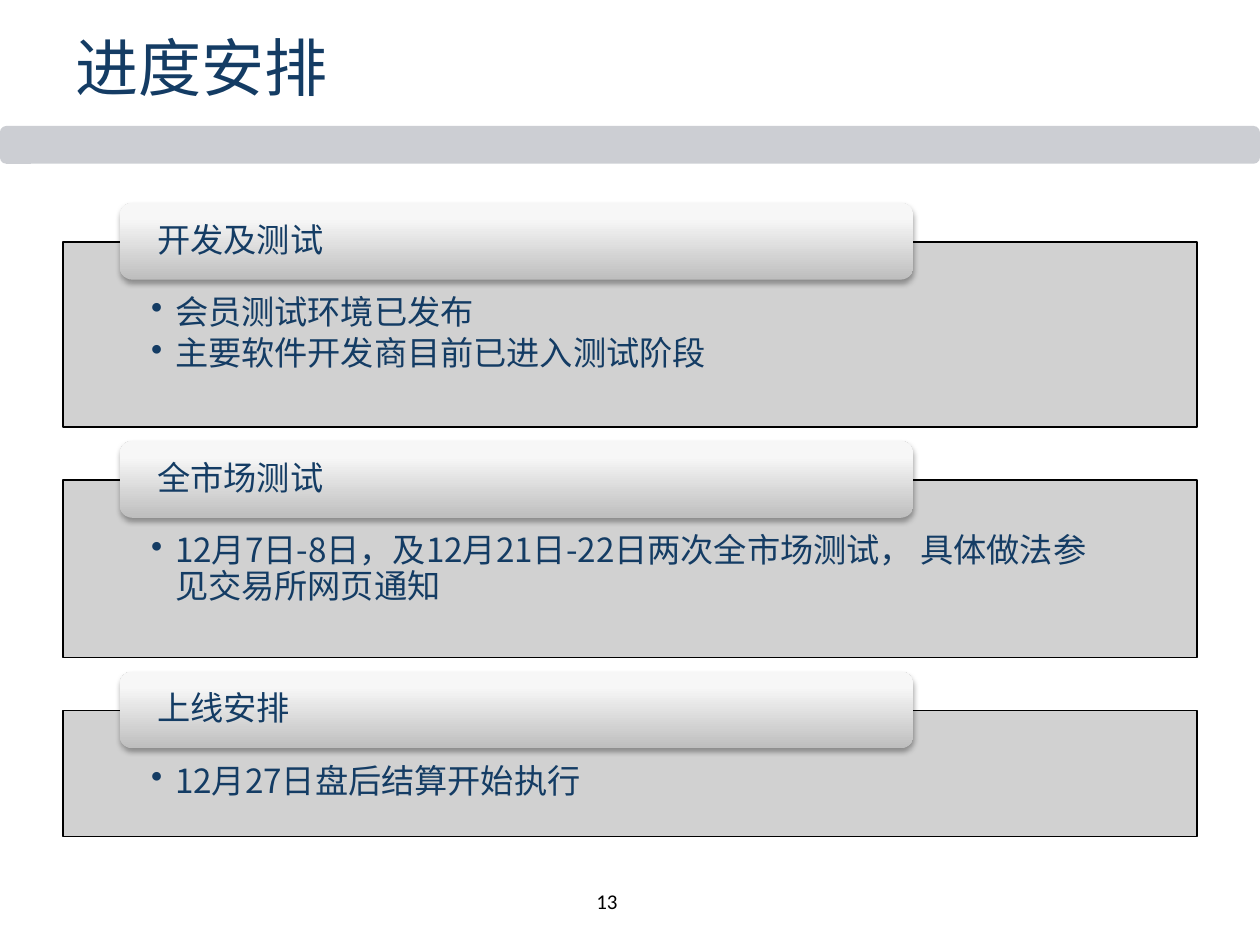
from copy import deepcopy

from lxml.etree import SubElement
from pptx import Presentation
from pptx.dml.color import RGBColor
from pptx.enum.shapes import MSO_SHAPE
from pptx.enum.text import MSO_ANCHOR, PP_ALIGN
from pptx.oxml.ns import qn
from pptx.util import Inches, Pt

COLORS = {
    "text": "143C64",
    "bar": "CCCED3",
    "panel": "CCCCCC",
    "black": "000000",
    "label_bottom": "BEBEBE",
    "label_middle": "F7F7F7",
    "label_top": "F8F8F8",
}
CHINESE_FONT = "Noto Sans CJK SC"
STAGES = [
    ("开发及测试", 1.47, ["会员测试环境已发布", "主要软件开发商目前已进入测试阶段"]),
    ("全市场测试", 1.41, ["12月7日-8日，及12月21日-22日两次全市场测试， 具体做法参见交易所网页通知"]),
    ("上线安排", 1, ["12月27日盘后结算开始执行"]),
]
STAGE_GAP = 0.42


def color(name):
    return RGBColor.from_string(COLORS[name])


def format_paragraph(paragraph, size, color_name="text", font_name=CHINESE_FONT, align=PP_ALIGN.LEFT):
    paragraph.alignment = align
    paragraph.font.size = Pt(size)
    paragraph.font.color.rgb = color(color_name)
    paragraph.font.name = font_name
    properties = paragraph._p.pPr.find(qn("a:defRPr"))
    SubElement(properties, qn("a:ea"), typeface=font_name)


def set_margins(frame, left, top, right, bottom):
    frame.margin_left, frame.margin_top = Inches(left), Inches(top)
    frame.margin_right, frame.margin_bottom = Inches(right), Inches(bottom)
    frame.word_wrap = True


def add_plain_shape(slide, kind, left, top, width, height):
    shape = slide.shapes.add_shape(kind, Inches(left), Inches(top), Inches(width), Inches(height))
    shape.shadow.inherit = False
    return shape


def add_bullet(paragraph):
    properties = paragraph._p.get_or_add_pPr()
    properties.set("marL", str(Inches(0.19)))
    properties.set("indent", str(Inches(-0.19)))
    SubElement(properties, qn("a:buChar"), char="•")


def add_header(slide, left, top, width):
    title = slide.shapes.title
    title.left, title.top = Inches(left + 0.5), Inches(top + 0.14)
    title.width, title.height = Inches(width - 1), Inches(0.78)
    title.text_frame.text = "进度安排"
    title.text_frame.vertical_anchor = MSO_ANCHOR.MIDDLE
    format_paragraph(title.text_frame.paragraphs[0], 36)

    bar = add_plain_shape(slide, MSO_SHAPE.ROUNDED_RECTANGLE, left, top + 1, width, 0.3)
    bar.fill.solid()
    bar.fill.fore_color.rgb = color("bar")
    bar.line.fill.background()


def add_panel(slide, left, top, width, height, items):
    panel = add_plain_shape(slide, MSO_SHAPE.RECTANGLE, left, top, width, height)
    panel.fill.solid()
    panel.fill.fore_color.rgb = color("panel")
    fill_color = panel._element.spPr.find(qn("a:solidFill")).find(qn("a:srgbClr"))
    SubElement(fill_color, qn("a:alpha"), val="90000")
    panel.line.color.rgb = color("black")
    panel.line.width = Pt(0.75)

    frame = panel.text_frame
    set_margins(frame, 0.7, 0.43, 0.7, 0.15)
    frame.vertical_anchor = MSO_ANCHOR.TOP
    frame.text = "\n".join(items)
    for paragraph in frame.paragraphs:
        paragraph.level = 1
        add_bullet(paragraph)
        paragraph.line_spacing = 0.9
        paragraph.space_after = Pt(3)
        format_paragraph(paragraph, 19)


def add_label(slide, left, top, width, height, text):
    label = add_plain_shape(slide, MSO_SHAPE.ROUNDED_RECTANGLE, left, top, width, height)
    label.fill.gradient()
    label.fill.gradient_angle = 90
    stop_list = label._element.spPr.find(".//" + qn("a:gsLst"))
    stop_list.append(deepcopy(stop_list[-1]))
    stops = [(0, "label_bottom"), (0.8, "label_middle"), (1, "label_top")]
    for stop, (position, name) in zip(label.fill.gradient_stops, stops):
        stop.position = position
        stop.color.rgb = color(name)
    label.line.fill.background()

    effects = label._element.spPr.find(qn("a:effectLst"))
    shadow = SubElement(effects, qn("a:outerShdw"), blurRad=str(Pt(3.1)), dist=str(Pt(1.8)),
                        dir="5400000", rotWithShape="0")
    shadow_color = SubElement(shadow, qn("a:srgbClr"), val=COLORS["black"])
    SubElement(shadow_color, qn("a:alpha"), val="35000")

    frame = label.text_frame
    set_margins(frame, 0.27, 0, 0.27, 0)
    frame.vertical_anchor = MSO_ANCHOR.MIDDLE
    frame.text = text
    paragraph = frame.paragraphs[0]
    paragraph.line_spacing = 0.9
    format_paragraph(paragraph, 19)


def add_stages(slide, left, top, width):
    for name, height, items in STAGES:
        add_panel(slide, left, top, width, height, items)
        add_label(slide, left + 0.45, top - 0.31, width * 0.7, 0.61, name)
        top += height + STAGE_GAP


def add_page_number(slide, left, top, width, height):
    box = slide.shapes.add_textbox(Inches(left), Inches(top), Inches(width), Inches(height))
    frame = box.text_frame
    frame.word_wrap = True
    frame.vertical_anchor = MSO_ANCHOR.MIDDLE
    frame.text = "13"
    format_paragraph(frame.paragraphs[0], 12, "black", "Calibri", PP_ALIGN.RIGHT)


def main():
    presentation = Presentation()
    presentation.slide_width, presentation.slide_height = Inches(10), Inches(7.5)
    slide = presentation.slides.add_slide(presentation.slide_layouts[5])
    add_header(slide, 0, 0, 10)
    add_stages(slide, 0.5, 1.92, 9)
    add_page_number(slide, 4.17, 6.95, 0.83, 0.4)
    presentation.save("out.pptx")


if __name__ == "__main__":
    main()
